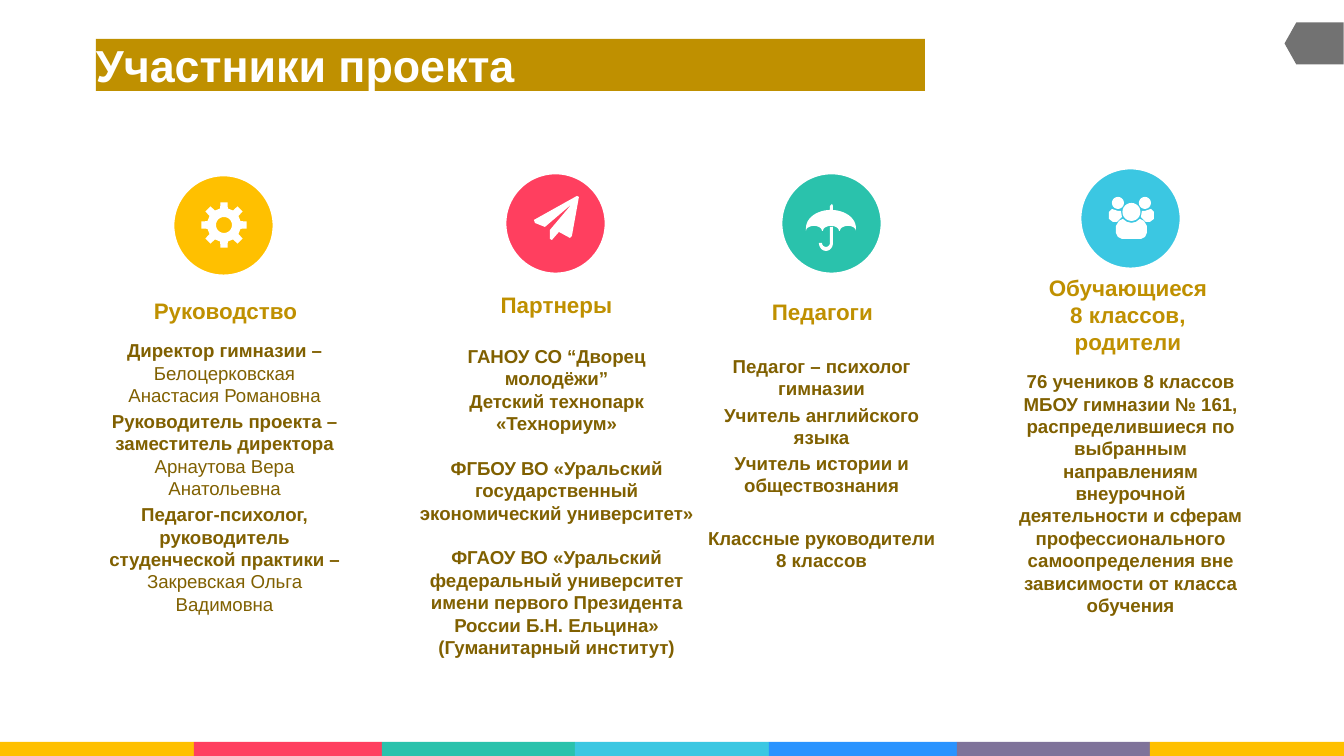
from dataclasses import dataclass
from math import cos, radians, sin

from pptx import Presentation
from pptx.dml.color import RGBColor
from pptx.enum.shapes import MSO_SHAPE
from pptx.enum.text import MSO_ANCHOR, MSO_AUTO_SIZE, PP_ALIGN
from pptx.util import Emu, Pt


@dataclass(frozen=True)
class Theme:
    """Colours, font and type sizes of the slide."""
    font: str = "Arial"
    white: str = "FFFFFF"
    gold: str = "BF9000"
    brown: str = "806000"
    grey: str = "727272"
    yellow: str = "FFC000"
    red: str = "FF3F5F"
    teal: str = "2AC2AC"
    sky: str = "3BC7E2"
    blue: str = "2993FF"
    violet: str = "7F739A"
    title_size: int = 24
    heading_size: int = 12
    body_size: int = 10
    leading: float = 1.2


@dataclass(frozen=True)
class Column:
    """One group of participants; places are relative to its box."""
    box: tuple
    colour: str
    badge_left: int
    icon: tuple
    contours: list
    heading_box: tuple
    heading: list
    body_top: int
    body: list
    gaps: list


THEME = Theme()


def px(length):
    """Turn pixels into EMU."""
    return Emu(round(length * 914400 / 134.4))


def set_format(target, values):
    """Set each named attribute of the target."""
    for name, value in values.items():
        setattr(target, name, value)


def paint(shape, colour, outline=None):
    """Give a shape a flat fill and an optional outline."""
    shape.shadow.inherit = False
    shape.fill.solid()
    shape.fill.fore_color.rgb = RGBColor.from_string(colour)
    if outline:
        shape.line.color.rgb = RGBColor.from_string(outline)
        shape.line.width = Pt(1.5)
    else:
        shape.line.fill.background()


def add_block(page, kind, box, colour, outline=None):
    """Add a painted preset shape."""
    shape = page.shapes.add_shape(kind, *map(px, box))
    paint(shape, colour, outline)
    return shape


def write(frame, paragraphs, size, colour, align, anchor=MSO_ANCHOR.TOP, gaps=(), leading=None):
    """Fill a text frame; each paragraph is a list of texts, bold then regular."""
    set_format(frame, {"word_wrap": True, "auto_size": MSO_AUTO_SIZE.NONE, "vertical_anchor": anchor,
                       "margin_left": 0, "margin_right": 0, "margin_top": 0, "margin_bottom": 0})
    for index, texts in enumerate(paragraphs):
        para = frame.add_paragraph() if index else frame.paragraphs[0]
        set_format(para, {"alignment": align, "space_before": Pt(gaps[index] if gaps else 0)})
        if leading:
            para.line_spacing = Pt(size * leading)
        for order, text in enumerate(texts):
            span = para.add_run()
            span.text = text
            set_format(span.font, {"name": THEME.font, "size": Pt(size), "bold": order == 0})
            span.font.color.rgb = RGBColor.from_string(colour)


def add_text(page, box, paragraphs, size, colour, gaps=()):
    """Add a centred text box."""
    frame = page.shapes.add_textbox(*map(px, box)).text_frame
    write(frame, paragraphs, size, colour, PP_ALIGN.CENTER, gaps=gaps, leading=THEME.leading)


def arc(x, y, wide, high, start, end, steps=24):
    """List points along an elliptical arc, in degrees."""
    angles = [radians(start + (end - start) * step / steps) for step in range(steps + 1)]
    return [(x + wide * cos(angle), y + high * sin(angle)) for angle in angles]


def disc(x, y, radius):
    """List the points of a circle."""
    return arc(x, y, radius, radius, 0, 360)


def gear():
    """Outline a gear with eight teeth and a round hole."""
    rim = []
    for turn in range(0, 360, 45):
        for radius, shift in ((17, -13), (23, -9), (23, 9), (17, 13)):
            rim += arc(23, 23, radius, radius, turn + shift, turn + shift, 1)[:1]
    return [rim, disc(23, 23, 8)]


def paper_plane():
    """Outline a folded paper plane."""
    return [[(45, 1), (38, 40), (36, 42), (25, 36), (18, 44), (16, 43), (16, 34),
             (38, 8), (11, 31), (1, 27), (0, 24), (43, 0)]]


def umbrella():
    """Outline an umbrella: canopy, handle and tip."""
    canopy = arc(25, 24, 25, 18, 180, 360)
    for middle in (42, 25, 8):
        canopy += arc(middle, 27, 8, 5, 0, -180)
    handle = [(24, 23), (27, 23)] + arc(20, 39, 7, 8, 0, 180) + arc(20, 39, 4, 4, 180, 0)
    return [canopy, handle, [(24, 6), (24, 2), (26, 0), (27, 2), (27, 6)]]


def people():
    """Outline three people, one in front."""
    side = [(8, 25), (4, 25), (0, 22), (0, 15), (3, 12), (9, 14), (12, 14), (13, 20)]
    half = [(23, 26), (18, 25), (14, 22), (10, 24), (7, 29), (7, 36), (9, 40), (13, 42)]
    front = half + [(45 - x, y) for x, y in reversed(half)]
    return [side, [(45 - x, y) for x, y in side], front,
            disc(9, 6, 6), disc(36, 6, 6), disc(22.5, 15, 9)]


def add_icon(page, left, top, contours):
    """Draw a white icon from closed contours."""
    placed = [[(px(left + x), px(top + y)) for x, y in contour] for contour in contours]
    builder = page.shapes.build_freeform(*placed[0][0], scale=1.0)
    for index, contour in enumerate(placed):
        if index:
            builder.move_to(*contour[0])
        builder.add_line_segments(contour[1:], close=True)
    paint(builder.convert_to_shape(), THEME.white)


def add_title(page, box, text):
    """Place the title on its gold bar."""
    title = page.shapes.title
    set_format(title, dict(zip(("left", "top", "width", "height"), map(px, box))))
    title.fill.solid()
    title.fill.fore_color.rgb = RGBColor.from_string(THEME.gold)
    write(title.text_frame, [[text]], THEME.title_size, THEME.white, PP_ALIGN.LEFT, MSO_ANCHOR.MIDDLE)


def add_strip(page, box):
    """Draw the coloured strip along the foot."""
    left, top, width, height = box
    colours = (THEME.yellow, THEME.red, THEME.teal, THEME.sky, THEME.blue, THEME.violet, THEME.yellow)
    starts = (0, 194, 382, 575, 769, 957, 1150)
    for start, end, colour in zip(starts, starts[1:] + (width,), colours):
        add_block(page, MSO_SHAPE.RECTANGLE, (left + start, top, end - start, height), colour)


def add_column(page, column):
    """Draw a badge with its icon, heading and text."""
    left, top, width, height = column.box
    badge_left = left + column.badge_left
    shift, drop, heading_width, heading_height = column.heading_box
    add_text(page, (left + shift, top + drop, heading_width, heading_height),
             column.heading, THEME.heading_size, THEME.gold)
    add_text(page, (left, top + column.body_top, width, height - column.body_top),
             column.body, THEME.body_size, THEME.brown, column.gaps)
    add_block(page, MSO_SHAPE.OVAL, (badge_left, top, 101, 101), column.colour, THEME.white)
    add_icon(page, badge_left + column.icon[0], top + column.icon[1], column.contours)


COLUMNS = [
    Column((107, 175, 235, 445), THEME.yellow, 66, (28, 27), gear(),
           (27, 122, 183, 27), [["Руководство"]], 164,
           [["Директор гимназии – ", "Белоцерковская Анастасия Романовна"],
            ["Руководитель проекта – заместитель директора ", "Арнаутова Вера Анатольевна"],
            ["Педагог-психолог, руководитель студенческой практики – ", "Закревская Ольга Вадимовна"]],
           [0, 2, 2]),
    Column((418, 173, 277, 486), THEME.red, 87, (29, 23), paper_plane(),
           (0, 118, 277, 27), [["Партнеры"]], 172,
           [["ГАНОУ СО “Дворец молодёжи”"],
            ["Детский технопарк «Технориум»"],
            ["ФГБОУ ВО «Уральский государственный экономический университет»"],
            ["ФГАОУ ВО «Уральский федеральный университет имени первого Президента России Б.Н. Ельцина»"],
            ["(Гуманитарный институт)"]],
           [0, 0, 12, 12, 0]),
    Column((704, 173, 235, 404), THEME.teal, 77, (25, 31), umbrella(),
           (33, 125, 171, 27), [["Педагоги"]], 182,
           [["Педагог – психолог гимназии"],
            ["Учитель английского языка"],
            ["Учитель истории и обществознания"],
            ["Классные руководители 8 классов"]],
           [0, 2, 2, 16]),
    Column((1013, 168, 235, 450), THEME.sky, 67, (29, 29), people(),
           (27, 106, 176, 82), [["Обучающиеся 8 классов,"], ["родители"]], 202,
           [["76 учеников 8 классов МБОУ гимназии № 161, распределившиеся по выбранным "
             "направлениям внеурочной деятельности и сферам профессионального "
             "самоопределения вне зависимости от класса обучения"]],
           [0]),
]


def main():
    """Build the slide and save the deck."""
    deck = Presentation()
    set_format(deck, {"slide_width": px(1344), "slide_height": px(756)})
    page = deck.slides.add_slide(deck.slide_layouts[5])
    add_strip(page, (0, 742, 1344, 14))
    add_block(page, MSO_SHAPE.FLOWCHART_OFFPAGE_CONNECTOR, (1293, 14, 42, 59), THEME.grey).rotation = 90
    add_title(page, (96, 39, 829, 52), "Участники проекта")
    for column in COLUMNS:
        add_column(page, column)
    deck.save("out.pptx")


if __name__ == "__main__":
    main()
